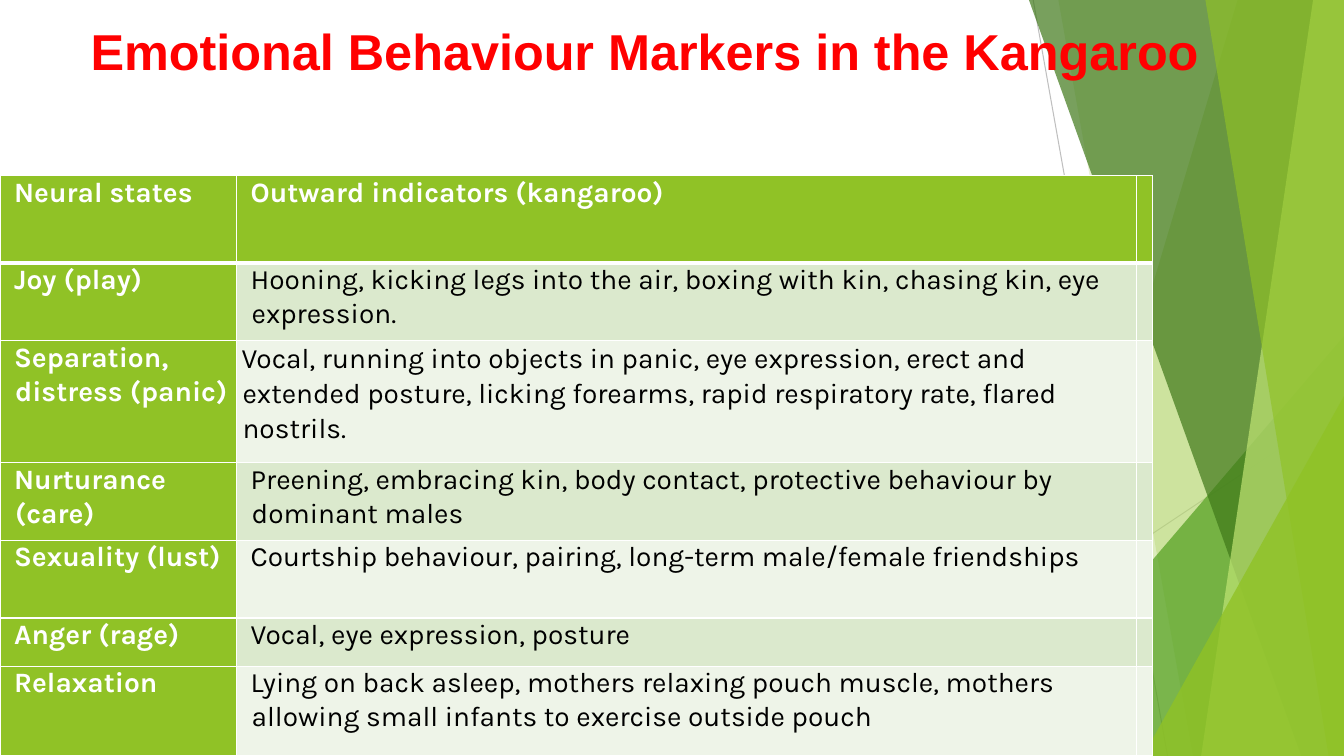
"""Build the slide on emotional behaviour markers in the kangaroo."""
from dataclasses import dataclass

from lxml.etree import SubElement
from pptx import Presentation
from pptx.dml.color import RGBColor
from pptx.enum.shapes import MSO_CONNECTOR, MSO_SHAPE
from pptx.enum.text import MSO_ANCHOR, PP_ALIGN
from pptx.oxml import parse_xml
from pptx.oxml.ns import nsdecls, qn
from pptx.util import Pt

W, H = 960, 540
GREEN, WHITE, BLACK, RED = "90C226", "FFFFFF", "000000", "FF0000"
BANDS = ("EEF4E8", "DBE9CD")


@dataclass
class Ray:
    start: tuple[float, float]
    end: tuple[float, float]
    colour: str


@dataclass
class Facet:
    top_x: float
    bottom_x: float
    colour: str
    opacity: int


@dataclass
class Peak:
    left: float
    top: float
    colour: str
    opacity: int


@dataclass
class Marker:
    state: str
    signs: str
    height: float
    indent: float = 7.2
    spacing: float = 1.03
    after: float = 8.4


RAYS = [
    Ray((738, 0), (834, H), "BFBFBF"),
    Ray((W, 290), (585, H), "D9D9D9"),
]
PANELS = [
    Facet(884, 723, GREEN, 30),
    Facet(756, 852, GREEN, 20),
    Peak(703.5, 240, "54A021", 72),
    Facet(735, 929.5, "3F7819", 70),
    Facet(938, 858, "C0E474", 70),
    Facet(861, 949, GREEN, 65),
    Peak(816.5, 283, GREEN, 80),
]
MARKERS = [
    Marker("Neural states", "Outward indicators (kangaroo)", 62.5),
    Marker("Joy (play)", "Hooning, kicking legs into the air, boxing with kin, "
           "chasing kin, eye expression.", 55.5),
    Marker("Separation, distress (panic)", "Vocal, running into objects in panic, "
           "eye expression, erect and extended posture, licking forearms, "
           "rapid respiratory rate, flared nostrils.", 87, 0.7, 1.07, 0),
    Marker("Nurturance (care)", "Preening, embracing kin, body contact, "
           "protective behaviour by dominant males", 55.5),
    Marker("Sexuality (lust)", "Courtship behaviour, pairing, "
           "long-term male/female friendships", 55.5),
    Marker("Anger (rage)", "Vocal, eye expression, posture", 34.5),
    Marker("Relaxation", "Lying on back asleep, mothers relaxing pouch muscle, "
           "mothers allowing small infants to exercise outside pouch", 64),
]
COLUMNS = (169, 643, 11)


def rgb(colour: str) -> RGBColor:
    return RGBColor.from_string(colour)


def set_all(target, values: dict) -> None:
    for name, value in values.items():
        setattr(target, name, value)


def draw_ray(s, ray: Ray) -> None:
    line = s.shapes.add_connector(
        MSO_CONNECTOR.STRAIGHT, *map(Pt, ray.start + ray.end))
    line.line.color.rgb = rgb(ray.colour)
    line.line.width = Pt(0.75)
    SubElement(line._element.spPr, qn("a:effectLst"))


def draw_panel(s, panel: Facet | Peak) -> None:
    if isinstance(panel, Facet):
        outline = s.shapes.build_freeform(Pt(panel.top_x), 0)
        corners = [(W, 0), (W, H), (panel.bottom_x, H)]
        outline.add_line_segments([(Pt(x), Pt(y)) for x, y in corners])
        sp = outline.convert_to_shape()
    else:
        sp = s.shapes.add_shape(
            MSO_SHAPE.ISOSCELES_TRIANGLE, Pt(panel.left), Pt(panel.top),
            Pt(W - panel.left), Pt(H - panel.top))
        sp.adjustments[0] = 1
    sp.shadow.inherit = False
    sp.line.fill.background()
    sp.fill.solid()
    sp.fill.fore_color.rgb = rgb(panel.colour)
    colour = sp._element.spPr.find(".//" + qn("a:srgbClr"))
    SubElement(colour, qn("a:alpha"), val=str(panel.opacity * 1000))


def write(tf, text: str, para: dict, font: dict, colour: str):
    p = tf.paragraphs[0]
    set_all(p, para)
    r = p.add_run()
    r.text = text
    set_all(r.font, font)
    r.font.color.rgb = rgb(colour)
    return p


def style_cell(cell, fill: str, row: int) -> None:
    cell.fill.solid()
    cell.fill.fore_color.rgb = rgb(fill)
    set_all(cell, {"margin_left": Pt(3.6), "margin_right": Pt(3.6),
                   "margin_top": 0, "margin_bottom": 0})
    thick = {0: "lnB", 1: "lnT"}.get(row)
    tcPr = cell._tc.get_or_add_tcPr()
    for i, side in enumerate(("lnL", "lnR", "lnT", "lnB")):
        width = Pt(3 if side == thick else 1)
        tcPr.insert(i, parse_xml(
            f'<a:{side} {nsdecls("a")} w="{width}"><a:solidFill>'
            f'<a:srgbClr val="{WHITE}"/></a:solidFill></a:{side}>'))


def fill_table(s) -> None:
    height = sum(m.height for m in MARKERS)
    table = s.shapes.add_table(
        len(MARKERS), len(COLUMNS), 0, Pt(125.5),
        Pt(sum(COLUMNS)), Pt(height)).table
    for column, width in zip(table.columns, COLUMNS):
        column.width = Pt(width)
    for i, m in enumerate(MARKERS):
        table.rows[i].height = Pt(m.height)
        for j, text in enumerate((m.state, m.signs, "")):
            cell = table.cell(i, j)
            heading = i == 0 or j == 0
            style_cell(cell, GREEN if heading else BANDS[i % 2], i)
            if not text:
                continue
            layout = m if j else Marker(m.state, m.signs, m.height)
            p = write(cell.text_frame, text,
                      {"line_spacing": layout.spacing,
                       "space_after": Pt(layout.after)},
                      {"size": Pt(20), "name": "Karla", "bold": heading},
                      WHITE if heading else BLACK)
            pPr = p._p.get_or_add_pPr()
            pPr.set("marL", str(Pt(layout.indent)))
            pPr.set("indent", str(Pt(-0.7)))


def main() -> None:
    prs = Presentation()
    prs.slide_width, prs.slide_height = Pt(W), Pt(H)
    s = prs.slides.add_slide(prs.slide_layouts[5])
    for ray in RAYS:
        draw_ray(s, ray)
    for panel in PANELS:
        draw_panel(s, panel)
    title = s.shapes.title
    s.shapes._spTree.append(title._element)
    set_all(title, {"left": Pt(57.5), "top": Pt(11), "width": Pt(808),
                    "height": Pt(70.5)})
    set_all(title.text_frame, {"word_wrap": True, "margin_right": 0,
                               "vertical_anchor": MSO_ANCHOR.TOP})
    write(title.text_frame, "Emotional Behaviour Markers in the Kangaroo",
          {"alignment": PP_ALIGN.LEFT},
          {"size": Pt(36), "name": "Arial", "bold": True}, RED)
    fill_table(s)
    prs.save("out.pptx")


if __name__ == "__main__":
    main()
